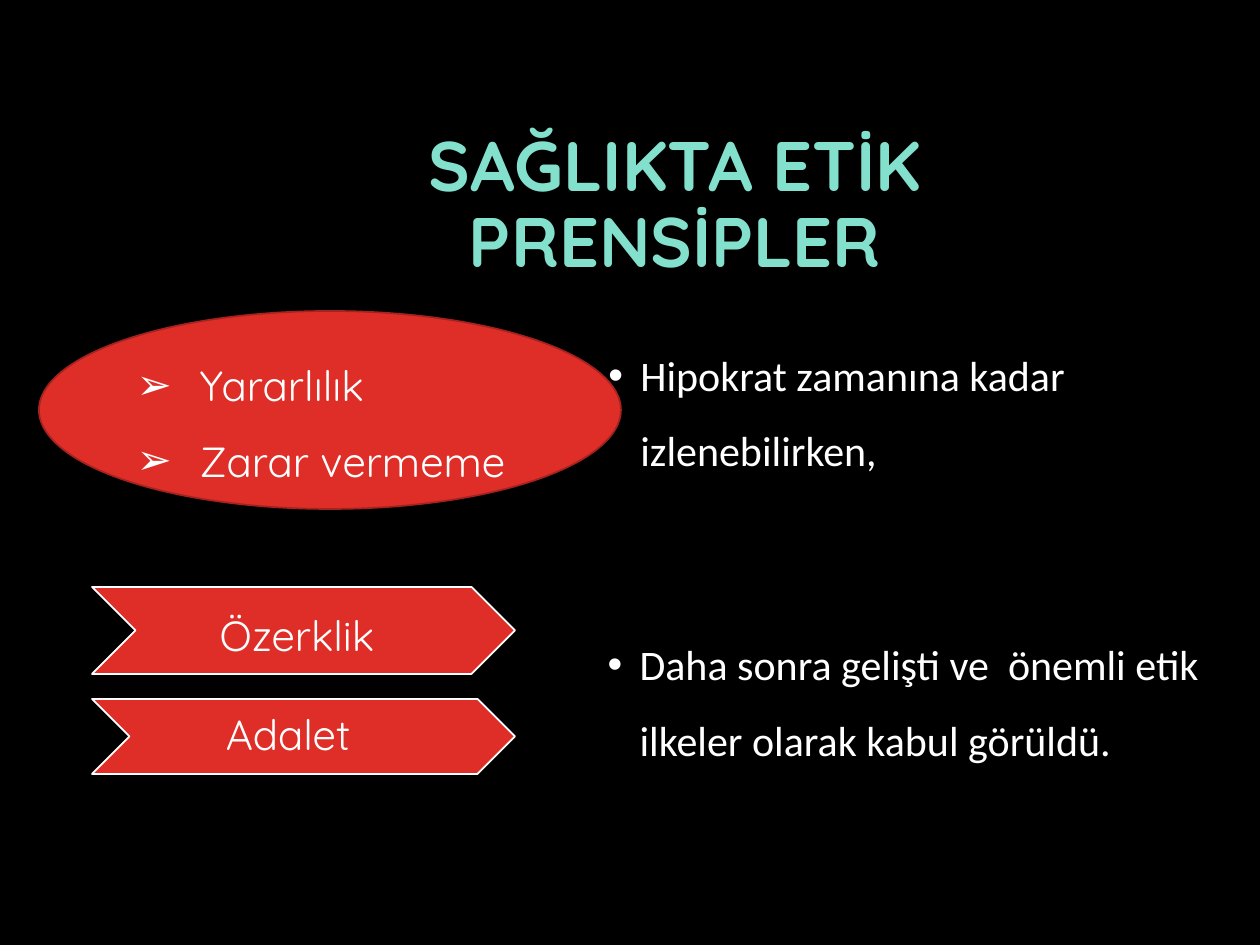
from lxml.etree import SubElement
from pptx import Presentation
from pptx.dml.color import RGBColor
from pptx.enum.shapes import MSO_SHAPE
from pptx.enum.text import MSO_ANCHOR, MSO_AUTO_SIZE, PP_ALIGN
from pptx.oxml.ns import qn
from pptx.util import Pt

PX = 914400 / 126
COLOURS = {"night": "000000", "mint": "82E0CD", "red": "DF2E28",
           "dark_red": "A5221E", "white": "FFFFFF"}

TITLE = "SAĞLIKTA ETİK PRENSİPLER"
TITLE_PLACE = (236, 118, 878, 178)
EARLY_PRINCIPLES = ["Yararlılık", "Zarar vermeme"]
EARLY_PLACE = (39, 311, 582, 198)
EARLY_NOTE = "Hipokrat zamanına kadar izlenebilirken,"
EARLY_NOTE_PLACE = (596, 318, 630, 165)
LATER_NOTE = "Daha sonra gelişti ve  önemli etik ilkeler olarak kabul görüldü."
LATER_NOTE_PLACE = (595, 607, 654, 232)
LATER_PRINCIPLES = [
    {"text": "Özerklik", "place": (92, 587, 423, 87), "margins": (0, 14, 13, 0)},
    {"text": "Adalet", "place": (92, 699, 423, 75), "margins": (0, 0, 31, 0)},
]


def px(length):
    return round(length * PX)


def colour(name):
    return RGBColor.from_string(COLOURS[name])


def place(shape, bounds):
    shape.left, shape.top, shape.width, shape.height = map(px, bounds)


def write(shape, lines, *, font="Quicksand", size=24, ink="white", bold=False,
          align=PP_ALIGN.LEFT, anchor=MSO_ANCHOR.MIDDLE, spacing=1.5,
          bullet=None, indent=0, margins=None):
    frame = shape.text_frame
    frame.word_wrap = True
    frame.auto_size = MSO_AUTO_SIZE.NONE
    frame.vertical_anchor = anchor
    if margins:
        (frame.margin_left, frame.margin_top,
         frame.margin_right, frame.margin_bottom) = map(px, margins)
    frame.text = "\n".join(lines)
    for para in frame.paragraphs:
        para.alignment = align
        para.line_spacing = spacing
        para.space_before = para.space_after = Pt(0)
        if bullet:
            properties = para._p.get_or_add_pPr()
            properties.set("marL", str(px(indent)))
            properties.set("indent", str(-px(indent)))
            SubElement(properties, qn("a:buFont")).set("typeface", "Arial")
            SubElement(properties, qn("a:buChar")).set("char", bullet)
        for span in para.runs:
            span.font.name = font
            span.font.size = Pt(size)
            span.font.bold = bold
            span.font.color.rgb = colour(ink)


def add_red_shape(page, kind, bounds, outline):
    shape = page.shapes.add_shape(kind, *map(px, bounds))
    shape.shadow.inherit = False
    shape.fill.solid()
    shape.fill.fore_color.rgb = colour("red")
    shape.line.color.rgb = colour(outline)
    shape.line.width = Pt(1)
    return shape


def main():
    deck = Presentation()
    deck.slide_width, deck.slide_height = px(1260), px(945)
    page = deck.slides.add_slide(deck.slide_layouts[1])
    page.background.fill.solid()
    page.background.fill.fore_color.rgb = colour("night")

    title, later_note = page.placeholders
    place(title, TITLE_PLACE)
    write(title, [TITLE], size=40, ink="mint", bold=True,
          align=PP_ALIGN.CENTER, spacing=0.9)

    ellipse = add_red_shape(page, MSO_SHAPE.OVAL, EARLY_PLACE, "dark_red")
    write(ellipse, EARLY_PRINCIPLES, bullet="➢", indent=63)

    early_note = page.shapes.add_textbox(*map(px, EARLY_NOTE_PLACE))
    place(later_note, LATER_NOTE_PLACE)
    for note, text in ((early_note, EARLY_NOTE), (later_note, LATER_NOTE)):
        write(note, [text], font="Calibri", anchor=MSO_ANCHOR.TOP,
              bullet="•", indent=32)

    for principle in LATER_PRINCIPLES:
        chevron = add_red_shape(page, MSO_SHAPE.CHEVRON, principle["place"], "white")
        write(chevron, [principle["text"]], align=PP_ALIGN.CENTER,
              spacing=0.9, margins=principle["margins"])

    deck.save("out.pptx")


if __name__ == "__main__":
    main()
